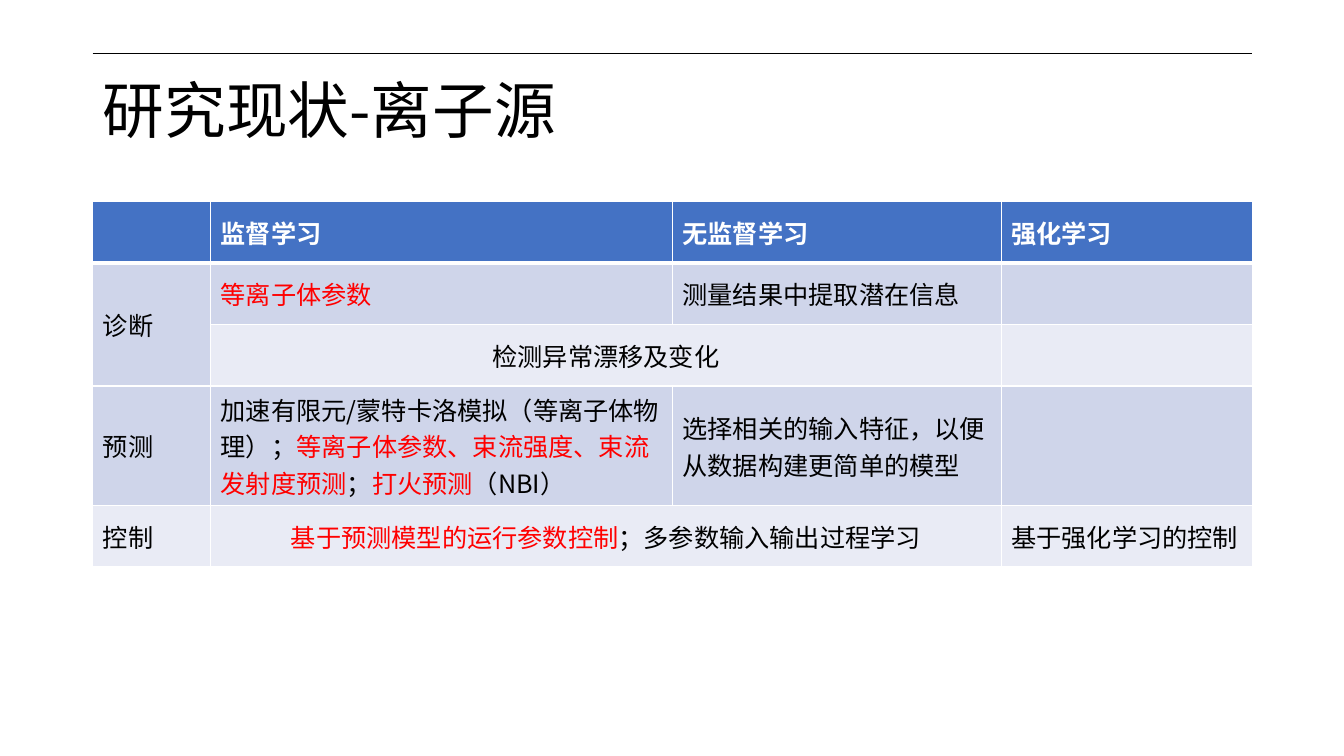
"""Build the slide on machine learning research for ion sources."""
from dataclasses import dataclass

from lxml.etree import SubElement
from pptx import Presentation
from pptx.dml.color import RGBColor
from pptx.enum.shapes import MSO_CONNECTOR as Connector
from pptx.enum.text import MSO_ANCHOR as Anchor, MSO_AUTO_SIZE as AutoSize, PP_ALIGN as Align
from pptx.oxml import parse_xml
from pptx.oxml.ns import nsdecls, qn
from pptx.slide import Slide
from pptx.table import Table, _Cell as Cell
from pptx.text.text import _Paragraph as Paragraph
from pptx.util import Inches, Pt

FONT = "Noto Sans CJK SC"
COLORS = {
    "black": "000000", "white": "FFFFFF", "red": "FF0000",
    "header": "4472C4", "odd": "CFD5EA", "even": "E9EBF5",
}
LEFT, WIDTH = 0.92, 11.5
COLUMN_WIDTHS = (1.17, 4.58, 3.26, 2.49)
ROW_COUNT, ROW_HEIGHT = 5, 0.61
TITLE_FORMAT = {"vertical_anchor": Anchor.MIDDLE, "word_wrap": True, "auto_size": AutoSize.NONE}


@dataclass(frozen=True)
class Run:
    """A piece of text in one colour."""
    text: str
    color: str = "black"


@dataclass(frozen=True)
class Entry:
    """The content of one table cell and the cells it covers."""
    row: int
    column: int
    runs: tuple[Run, ...]
    rows: int = 1
    columns: int = 1


ENTRIES = (
    Entry(0, 1, (Run("监督学习", "white"),)),
    Entry(0, 2, (Run("无监督学习", "white"),)),
    Entry(0, 3, (Run("强化学习", "white"),)),
    Entry(1, 0, (Run("诊断"),), rows=2),
    Entry(1, 1, (Run("等离子体参数", "red"),)),
    Entry(1, 2, (Run("测量结果中提取潜在信息"),)),
    Entry(2, 1, (Run("检测异常漂移及变化"),), columns=2),
    Entry(3, 0, (Run("预测"),)),
    Entry(3, 1, (
        Run("加速有限元/蒙特卡洛模拟（等离子体物理）；"),
        Run("等离子体参数、束流强度、束流发射度预测", "red"),
        Run("；"),
        Run("打火预测", "red"),
        Run("（NBI）"),
    )),
    Entry(3, 2, (Run("选择相关的输入特征，以便从数据构建更简单的模型"),)),
    Entry(4, 0, (Run("控制"),)),
    Entry(4, 1, (
        Run("基于预测模型的运行参数控制", "red"),
        Run("；多参数输入输出过程学习"),
    ), columns=2),
    Entry(4, 3, (Run("基于强化学习的控制"),)),
)


def rgb(name: str) -> RGBColor:
    """Look up a named colour."""
    return RGBColor.from_string(COLORS[name])


def add_run(paragraph: Paragraph, content: Run, size: int, bold: bool = False) -> None:
    """Append formatted text with the same Latin and East Asian font."""
    run = paragraph.add_run()
    run.text = content.text
    for name, value in {"name": FONT, "size": Pt(size), "bold": bold}.items():
        setattr(run.font, name, value)
    run.font.color.rgb = rgb(content.color)
    SubElement(run.font._element, qn("a:ea"), typeface=FONT)


def add_title(slide: Slide, text: str) -> None:
    """Fill and place the title placeholder."""
    title = slide.shapes.title
    box = {"left": LEFT, "top": 0.4, "width": WIDTH, "height": 1.45}
    for name, value in box.items():
        setattr(title, name, Inches(value))
    for name, value in TITLE_FORMAT.items():
        setattr(title.text_frame, name, value)
    paragraph = title.text_frame.paragraphs[0]
    for name, value in {"alignment": Align.LEFT, "line_spacing": 0.9}.items():
        setattr(paragraph, name, value)
    add_run(paragraph, Run(text), 44)


def add_rule(slide: Slide, top: float) -> None:
    """Draw the thin line above the title."""
    rule = slide.shapes.add_connector(
        Connector.STRAIGHT, Inches(LEFT), Inches(top), Inches(LEFT + WIDTH), Inches(top))
    rule.line.color.rgb = rgb("black")
    rule.line.width = Pt(1)
    SubElement(rule._element.spPr, qn("a:effectLst"))


def style_cell(cell: Cell, row: int) -> None:
    """Give a cell its band colour and white borders."""
    cell.vertical_anchor = Anchor.MIDDLE
    cell.fill.solid()
    cell.fill.fore_color.rgb = rgb("header" if row == 0 else "odd" if row % 2 else "even")
    widths = {"L": 1, "R": 1, "T": 3 if row == 1 else 1, "B": 3 if row == 0 else 1}
    properties = cell._tc.get_or_add_tcPr()
    for index, (side, width) in enumerate(widths.items()):
        properties.insert(index, parse_xml(
            f'<a:ln{side} {nsdecls("a")} w="{Pt(width)}"><a:solidFill>'
            f'<a:srgbClr val="{COLORS["white"]}"/></a:solidFill></a:ln{side}>'))


def fill_entry(table: Table, entry: Entry) -> None:
    """Merge the cells of an entry and write its text."""
    cell = table.cell(entry.row, entry.column)
    if entry.rows * entry.columns > 1:
        cell.merge(table.cell(entry.row + entry.rows - 1, entry.column + entry.columns - 1))
    paragraph = cell.text_frame.paragraphs[0]
    paragraph.alignment = Align.CENTER if entry.columns > 1 else Align.LEFT
    for content in entry.runs:
        add_run(paragraph, content, 18, bold=entry.row == 0)


def add_overview(slide: Slide) -> None:
    """Add the table of tasks against learning methods."""
    table = slide.shapes.add_table(
        ROW_COUNT, len(COLUMN_WIDTHS), Inches(LEFT), Inches(2),
        Inches(WIDTH), Inches(ROW_COUNT * ROW_HEIGHT)).table
    for column, width in zip(table.columns, COLUMN_WIDTHS):
        column.width = Inches(width)
    for index, row in enumerate(table.rows):
        row.height = Inches(ROW_HEIGHT)
        for cell in row.cells:
            style_cell(cell, index)
    for entry in ENTRIES:
        fill_entry(table, entry)


def main() -> None:
    """Build and save the presentation."""
    presentation = Presentation()
    presentation.slide_width = Inches(13.33)
    presentation.slide_height = Inches(7.5)
    slide = presentation.slides.add_slide(presentation.slide_layouts.get_by_name("Title Only"))
    add_rule(slide, 0.53)
    add_title(slide, "研究现状-离子源")
    add_overview(slide)
    presentation.save("out.pptx")


if __name__ == "__main__":
    main()
